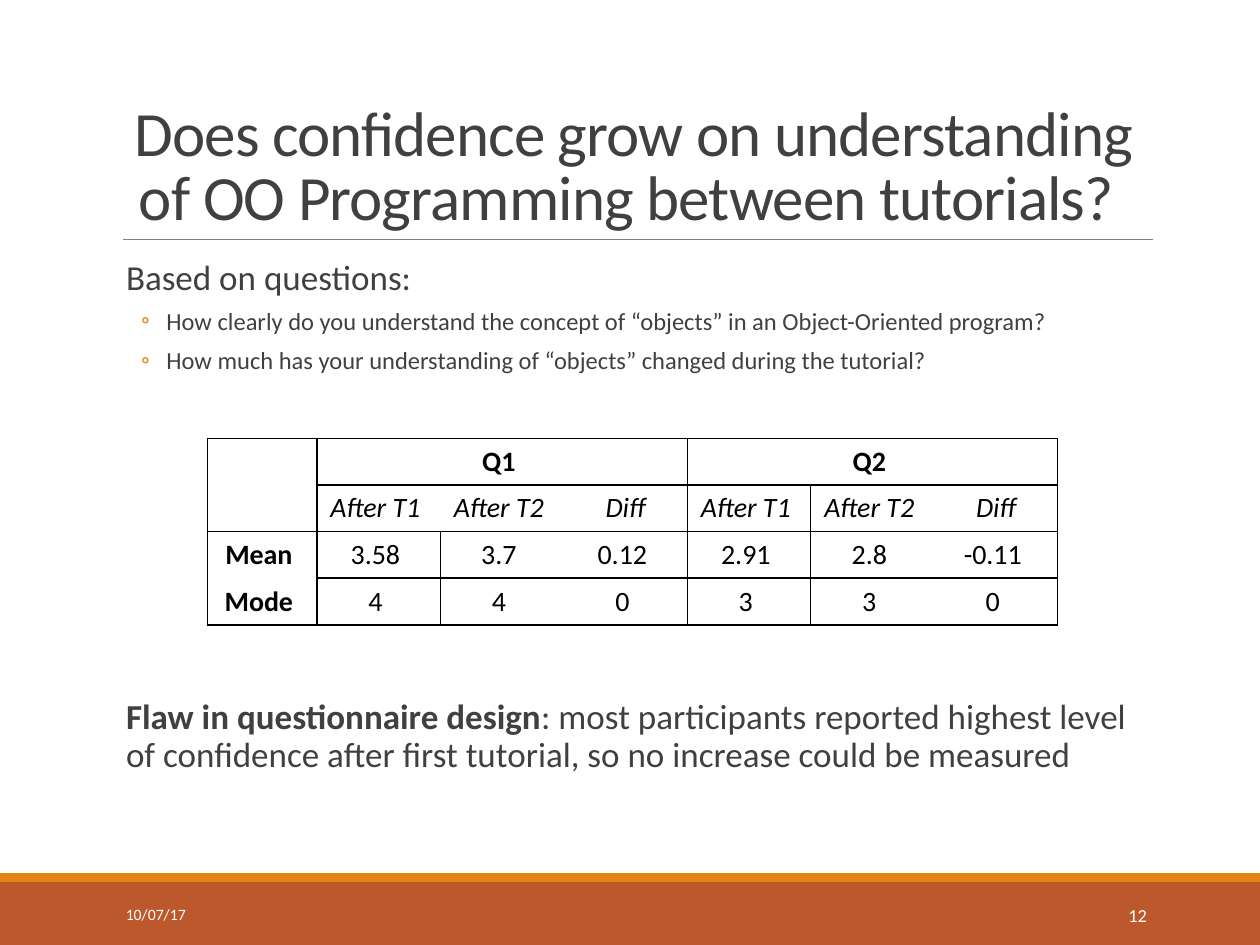
"""Build the slide on confidence growth between the two tutorials."""
import pptx
import pptx.dml.color
import pptx.enum.shapes
import pptx.enum.text
import pptx.oxml.ns
import pptx.util
from lxml import etree

COLORS = {
    "text": "404040",
    "band": "BD582C",
    "accent": "E48312",
    "rule": "808080",
    "grid": "000000",
    "footer": "FFFFFF",
}
ALIGN = pptx.enum.text.PP_ALIGN
ANCHOR = pptx.enum.text.MSO_ANCHOR
COLUMNS, ROWS = 100, 75


def color(name):
    return pptx.dml.color.RGBColor.from_string(COLORS[name])


def apply(target, values):
    for name, value in values.items():
        setattr(target, name, value)


def child(parent, tag, **attributes):
    return etree.SubElement(parent, pptx.oxml.ns.qn(tag), attributes)


class Deck:
    def __init__(self, font="Calibri", width=10, height=7.5):
        self.font = font
        self.presentation = pptx.Presentation()
        apply(self.presentation, {"slide_width": pptx.util.Inches(width),
                                  "slide_height": pptx.util.Inches(height)})
        self.slide = self.presentation.slides.add_slide(self.presentation.slide_layouts[6])

    def x(self, columns):
        return round(self.presentation.slide_width * columns / COLUMNS)

    def y(self, rows):
        return round(self.presentation.slide_height * rows / ROWS)

    def place(self, left, top, width, height):
        return self.x(left), self.y(top), self.x(width), self.y(height)

    def band(self, area, fill):
        kind = pptx.enum.shapes.MSO_SHAPE.RECTANGLE
        strip = self.slide.shapes.add_shape(kind, *self.place(*area))
        strip.shadow.inherit = False
        strip.fill.solid()
        strip.fill.fore_color.rgb = color(fill)
        strip.line.fill.background()

    def rule(self, left, right, row):
        kind = pptx.enum.shapes.MSO_CONNECTOR.STRAIGHT
        divider = self.slide.shapes.add_connector(
            kind, self.x(left), self.y(row), self.x(right), self.y(row))
        divider.line.color.rgb = color("rule")
        divider.line.width = pptx.util.Pt(0.5)
        child(divider.element.spPr, "a:effectLst")

    def run(self, paragraph, text, ink, size, spacing=None, **style):
        piece = paragraph.add_run()
        piece.text = text
        apply(piece.font, {"name": self.font, "size": pptx.util.Pt(size), **style})
        piece.font.color.rgb = color(ink)
        if spacing:
            piece.font._element.set("spc", str(round(spacing * 100)))

    def text(self, area, paragraphs, ink="text", inset=0.1, anchor=ANCHOR.TOP):
        frame = self.slide.shapes.add_textbox(*self.place(*area)).text_frame
        side = pptx.util.Inches(inset)
        apply(frame, {"word_wrap": True, "vertical_anchor": anchor,
                      "margin_left": side, "margin_right": side})
        for index, (layout, runs) in enumerate(paragraphs):
            paragraph = frame.add_paragraph() if index else frame.paragraphs[0]
            layout = dict(layout)
            margin, indent = layout.pop("indent", (0, 0))
            bullet = layout.pop("bullet", None)
            apply(paragraph, layout)
            properties = paragraph._p.get_or_add_pPr()
            properties.set("marL", str(pptx.util.Inches(margin)))
            properties.set("indent", str(pptx.util.Inches(indent)))
            if bullet:
                child(child(properties, "a:buClr"), "a:srgbClr", val=COLORS["accent"])
                child(properties, "a:buFont", typeface=self.font)
                child(properties, "a:buChar", char=bullet)
            for content, style in runs:
                self.run(paragraph, content, ink, **style)

    def border(self, cell, side, visible):
        edge = child(cell._tc.get_or_add_tcPr(), f"a:ln{side}", w=str(pptx.util.Pt(1)))
        if visible:
            child(child(edge, "a:solidFill"), "a:srgbClr", val=COLORS["grid"])
        else:
            child(edge, "a:noFill")

    def table(self, area, widths, rows, merges, vertical, horizontal, style):
        table = self.slide.shapes.add_table(len(rows), len(widths), *self.place(*area)).table
        apply(table, {"first_row": False, "horz_banding": False})
        for column, width in zip(table.columns, widths):
            column.width = self.x(width)
        for top, left, bottom, right in merges:
            table.cell(top, left).merge(table.cell(bottom, right))
        for r, values in enumerate(rows):
            for c, value in enumerate(values):
                cell = table.cell(r, c)
                apply(cell, {"margin_top": 0, "margin_bottom": 0,
                             "vertical_anchor": ANCHOR.MIDDLE})
                self.border(cell, "L", vertical(r, c))
                self.border(cell, "R", vertical(r, c + cell.span_width))
                self.border(cell, "T", horizontal(r, c))
                self.border(cell, "B", horizontal(r + cell.span_height, c))
                cell.fill.background()
                paragraph = cell.text_frame.paragraphs[0]
                paragraph.alignment = ALIGN.CENTER
                if value:
                    self.run(paragraph, value, "grid", 16, **style(r, c))


def main():
    deck = Deck()
    deck.band((0, 70, 100, 5), "band")
    deck.band((0, 69.3, 100, 0.7), "accent")
    deck.rule(9.8, 91.5, 19)

    deck.text((9, 3.1, 82.5, 15.9), [
        ({"alignment": ALIGN.CENTER, "line_spacing": 0.85},
         [("Does confidence grow on understanding of OO Programming between tutorials? ",
           {"size": 36, "spacing": -0.5})]),
    ], anchor=ANCHOR.BOTTOM)

    statement = {"indent": (0.1, 0), "line_spacing": 0.9, "space_after": pptx.util.Pt(2)}
    question = {"indent": (0.42, -0.2), "bullet": "◦",
                "space_before": pptx.util.Pt(2), "space_after": pptx.util.Pt(4)}
    deck.text((9, 20.2, 82.5, 11), [
        (statement, [("Based on questions:", {"size": 20})]),
        (question, [("How clearly do you understand the concept of “objects” "
                     "in an Object-Oriented program?", {"size": 14})]),
        (question, [("How much has your understanding of “objects” "
                     "changed during the tutorial?", {"size": 14})]),
    ], inset=0)

    measures = ["After T1 ", "After T2 ", "Diff"]
    results = [
        ["", "Q1 ", "", "", "Q2 ", "", ""],
        ["", *measures, *measures],
        ["Mean ", "3.58 ", "3.7 ", "0.12 ", "2.91 ", "2.8 ", "-0.11 "],
        ["Mode ", "4 ", "4 ", "0 ", "3 ", "3 ", "0 "],
    ]
    divider_start = {0: 0, 1: 0, 2: 2, 4: 0, 5: 1, 7: 0}
    deck.table(
        (16.45, 34.8, 67.5, 14.8), [8.7] + [9.8] * 6, results,
        merges=[(0, 0, 1, 0), (0, 1, 0, 3), (0, 4, 0, 6)],
        vertical=lambda r, c: r >= divider_start.get(c, len(results)),
        horizontal=lambda r, c: c > 0 or r % 2 == 0,
        style=lambda r, c: {"bold": r == 0 or c == 0, "italic": r == 1})

    deck.text((9, 55, 82.5, 8), [
        (statement, [
            ("Flaw in questionnaire design", {"size": 20, "bold": True}),
            (": most participants reported highest level of confidence after first "
             "tutorial, so no increase could be measured", {"size": 20}),
        ]),
    ], inset=0)

    for area, label, size, alignment in [
        ((9, 70.6, 20.3, 4), "10/07/17", 9, ALIGN.LEFT),
        ((81.2, 70.6, 10.8, 4), "12", 10.5, ALIGN.RIGHT),
    ]:
        deck.text(area, [({"alignment": alignment}, [(label, {"size": size})])],
                  ink="footer", anchor=ANCHOR.MIDDLE)

    deck.presentation.save("out.pptx")


if __name__ == "__main__":
    main()
